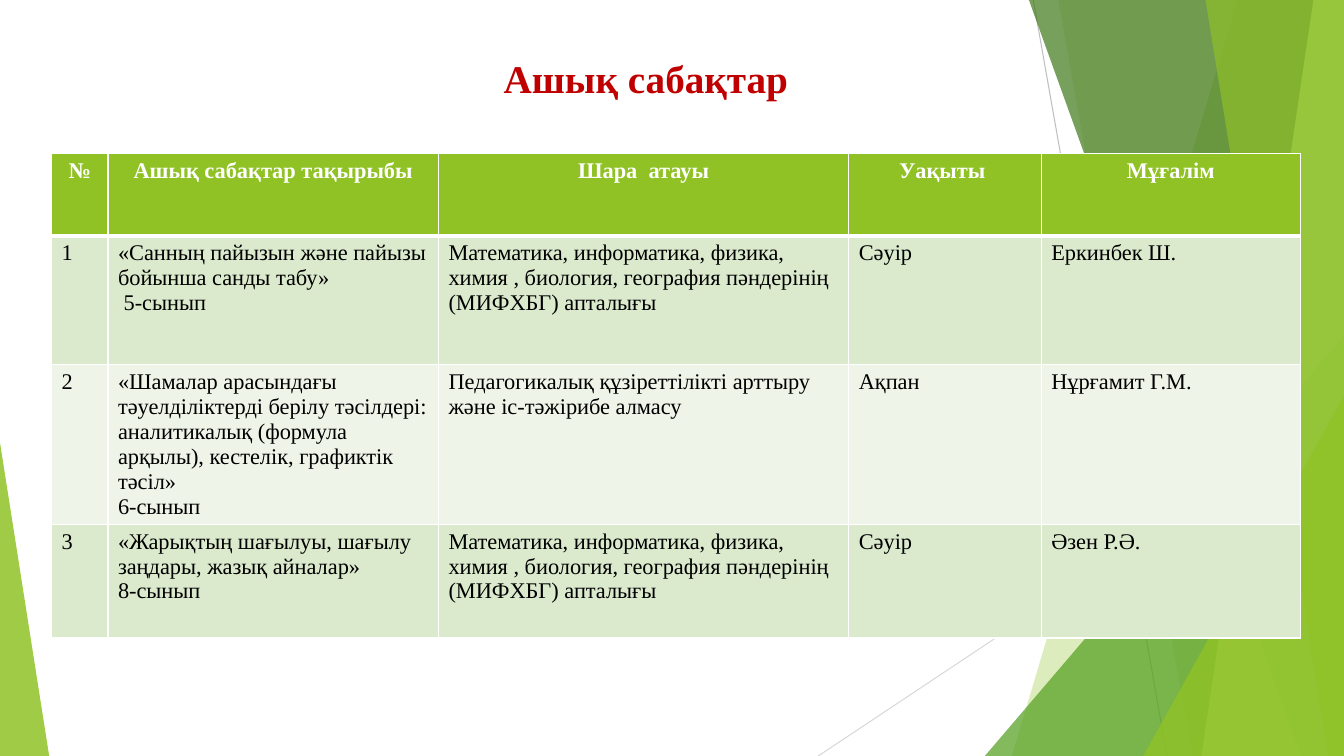
from lxml.etree import SubElement
from pptx import Presentation
from pptx.dml.color import RGBColor
from pptx.enum.shapes import MSO_CONNECTOR as Connector, MSO_SHAPE as Shape
from pptx.enum.text import PP_ALIGN as Align
from pptx.oxml.ns import qn
from pptx.util import Cm, Pt

WIDTH, HEIGHT = 33.87, 19.05
FONT = "Times New Roman"
COLORS = {
    "white": "FFFFFF", "black": "000000", "title": "C00000",
    "lime": "90C226", "pale lime": "C0E474", "green": "54A021", "dark green": "3F7819",
    "gray": "BFBFBF", "light gray": "D9D9D9", "band": "DBE9CD", "light band": "EEF4E8",
}
RAYS = [((26.04, 0), (29.41, HEIGHT), "gray"), ((WIDTH, 10.24), (20.62, HEIGHT), "light gray")]
BACK_FACETS = [(31.19, 25.5, "lime", 30), (26.67, 30.05, "lime", 20)]
FRONT_FACETS = [
    (25.93, 32.79, "dark green", 70),
    (33.1, 30.28, "pale lime", 70),
    (30.38, 33.48, "lime", 65),
]
COLUMNS = [1.42, 8.33, 10.34, 4.85, 6.53]
ROWS = [2.08, 3.25, 2.87, 2.87]
SUBJECT_WEEK = ("Математика, информатика, физика,  химия , биология, "
                "география пәндерінің (МИФХБГ) апталығы")
LESSONS = [
    ["№", "Ашық сабақтар тақырыбы", "Шара  атауы", "Уақыты ", "Мұғалім"],
    ["1", "«Санның пайызын және пайызы бойынша санды табу»\n 5-сынып",
     SUBJECT_WEEK, "Сәуір", "Еркинбек Ш."],
    ["2", "«Шамалар арасындағы тәуелділіктерді берілу тәсілдері: аналитикалық "
          "(формула арқылы), кестелік, графиктік тәсіл»\n6-сынып",
     "Педагогикалық құзіреттілікті арттыру және іс-тәжірибе алмасу", "Ақпан", "Нұрғамит Г.М."],
    ["3", "«Жарықтың шағылуы, шағылу заңдары, жазық айналар»\n8-сынып",
     SUBJECT_WEEK, "Сәуір", "Әзен Р.Ә."],
]


class SlideBuilder:
    """Draws styled elements on the current slide."""

    def __init__(self, page):
        self.page = page

    def color(self, name):
        return RGBColor.from_string(COLORS[name])

    def paint(self, shape, color, opacity):
        shape.shadow.inherit = False
        shape.line.fill.background()
        shape.fill.solid()
        shape.fill.fore_color.rgb = self.color(color)
        tint = shape._element.spPr.find(qn("a:solidFill"))[0]
        SubElement(tint, qn("a:alpha"), val=str(opacity * 1000))

    def ray(self, start, end, color):
        points = [Cm(value) for value in (*start, *end)]
        line = self.page.shapes.add_connector(Connector.STRAIGHT, *points)
        line.line.color.rgb = self.color(color)
        line.line.width = Pt(0.75)
        SubElement(line._element.spPr, qn("a:effectLst"))

    def facet(self, top_x, bottom_x, color, opacity):
        outline = self.page.shapes.build_freeform(Cm(top_x), 0)
        corners = [(WIDTH, 0), (WIDTH, HEIGHT), (bottom_x, HEIGHT)]
        outline.add_line_segments([(Cm(x), Cm(y)) for x, y in corners])
        self.paint(outline.convert_to_shape(), color, opacity)

    def triangle(self, left, width, height, apex, color, opacity):
        shape = self.page.shapes.add_shape(
            Shape.ISOSCELES_TRIANGLE, Cm(left), Cm(HEIGHT - height), Cm(width), Cm(height))
        shape.adjustments[0] = apex
        self.paint(shape, color, opacity)

    def fill_text(self, frame, text, size, color, bold, align):
        frame.word_wrap = True
        frame.text = text
        for para in frame.paragraphs:
            para.alignment = align
            para.font.name = FONT
            para.font.size = Pt(size)
            para.font.bold = bold
            para.font.color.rgb = self.color(color)

    def title(self, text, left, top, width, height):
        box = self.page.shapes.add_textbox(Cm(left), Cm(top), Cm(width), Cm(height))
        self.fill_text(box.text_frame, text, 28, "title", True, Align.CENTER)

    def border(self, cell, side, points):
        edge = SubElement(cell._tc.get_or_add_tcPr(), qn(f"a:ln{side}"), w=str(Pt(points)))
        fill = SubElement(edge, qn("a:solidFill"))
        SubElement(fill, qn("a:srgbClr"), val=COLORS["white"])

    def table(self, rows, left, top):
        frame = self.page.shapes.add_table(
            len(ROWS), len(COLUMNS), Cm(left), Cm(top), Cm(sum(COLUMNS)), Cm(sum(ROWS)))
        grid = frame.table
        for column, width in zip(grid.columns, COLUMNS):
            column.width = Cm(width)
        for number, (row, height, texts) in enumerate(zip(grid.rows, ROWS, rows)):
            row.height = Cm(height)
            header = number == 0
            fill = "lime" if header else ("light band", "band")[number % 2]
            for cell, text in zip(row.cells, texts):
                for side in "LRTB":
                    thick = (number, side) in ((0, "B"), (1, "T"))
                    self.border(cell, side, 3 if thick else 1)
                cell.fill.solid()
                cell.fill.fore_color.rgb = self.color(fill)
                self.fill_text(cell.text_frame, text, 16, "white" if header else "black",
                               header, Align.CENTER if header else Align.LEFT)


def main():
    deck = Presentation()
    deck.slide_width, deck.slide_height = Cm(WIDTH), Cm(HEIGHT)
    builder = SlideBuilder(deck.slides.add_slide(deck.slide_layouts[6]))
    for ray in RAYS:
        builder.ray(*ray)
    for facet in BACK_FACETS:
        builder.facet(*facet)
    builder.triangle(24.82, 9.05, 10.59, 1, "green", 72)
    for facet in FRONT_FACETS:
        builder.facet(*facet)
    builder.triangle(28.81, 5.06, 9.07, 1, "lime", 80)
    builder.triangle(0, 1.24, 7.9, 0, "lime", 85)
    builder.table(LESSONS, 1.3, 3.86)
    builder.title("Ашық сабақтар ", 1.9, 1.24, 29, 2.31)
    deck.save("out.pptx")


if __name__ == "__main__":
    main()
